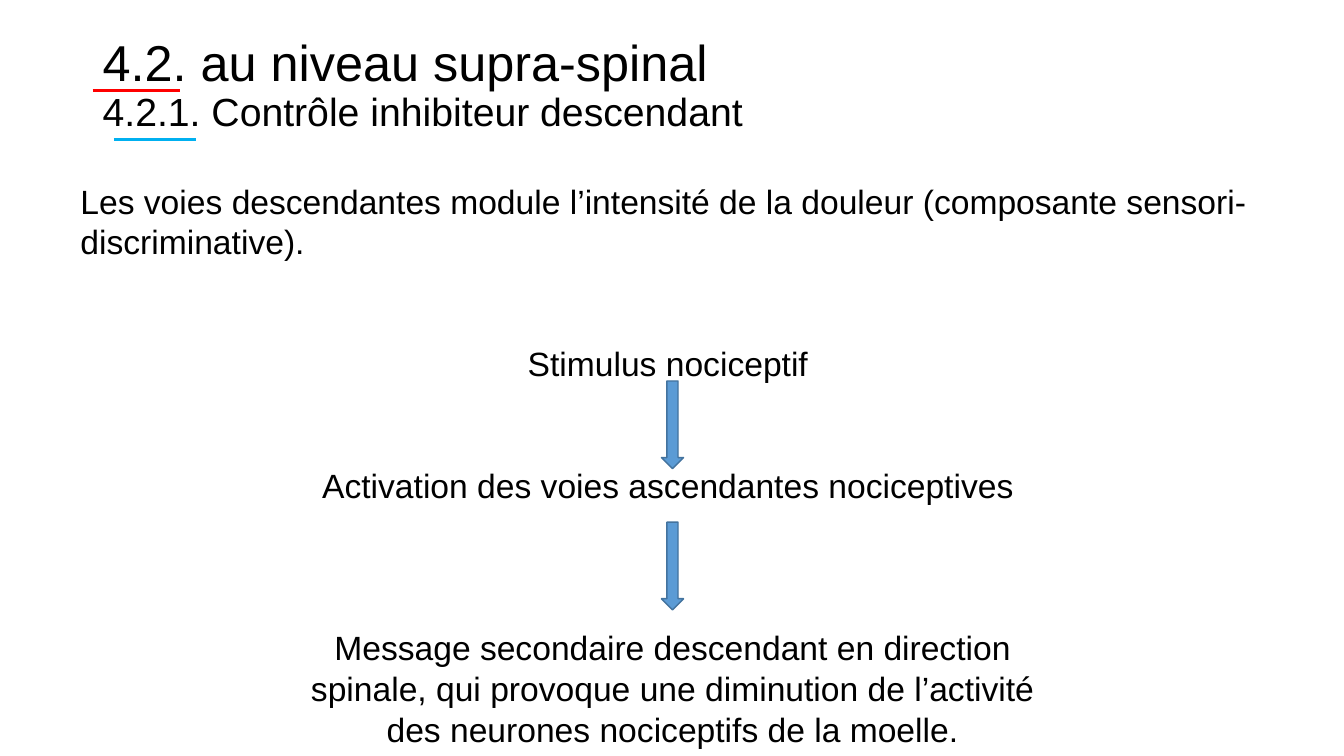
from pptx import Presentation
from pptx.dml.color import RGBColor
from pptx.enum.shapes import MSO_CONNECTOR, MSO_SHAPE
from pptx.enum.text import MSO_ANCHOR, PP_ALIGN
from pptx.oxml.ns import qn
from pptx.util import Emu, Pt
from lxml.etree import SubElement

PX = 9144  # 100 px to the inch
FONT = "Arial"
ROW = 29  # line height of the body, in points

# Text, alignment, empty rows above
STEPS = [
    ("Les voies descendantes module l’intensité de la douleur "
     "(composante sensori-discriminative).", PP_ALIGN.LEFT, 0),
    ("Stimulus nociceptif ", PP_ALIGN.CENTER, 2),
    ("Activation des voies ascendantes nociceptives ", PP_ALIGN.CENTER, 2),
    ("Message secondaire descendant en direction", PP_ALIGN.CENTER, 3),
    ("spinale, qui provoque une diminution de l’activité", PP_ALIGN.CENTER, 0),
    ("des neurones nociceptifs de la moelle.", PP_ALIGN.CENTER, 0),
]


def px(*vals):
    return [Emu(val * PX) for val in vals]


def color(code):
    return RGBColor.from_string(code)


def add_run(para, text, size):
    run = para.add_run()
    run.text = text
    run.font.name = FONT
    run.font.size = Pt(size)
    run.font.color.rgb = color("000000")


def add_frame(slide, box):
    frame = slide.shapes.add_textbox(*px(*box)).text_frame
    frame.word_wrap = True
    return frame


def add_rule(slide, left, top, width, code):
    line = slide.shapes.add_connector(
        MSO_CONNECTOR.STRAIGHT, *px(left, top, left + width, top))
    line.line.color.rgb = color(code)
    line.line.width = Pt(2.25)
    SubElement(line._element.spPr, qn("a:effectLst"))


def add_arrow(slide, left, top, width, height):
    arrow = slide.shapes.add_shape(
        MSO_SHAPE.DOWN_ARROW, *px(left, top, width, height))
    arrow.shadow.inherit = False
    arrow.fill.solid()
    arrow.fill.fore_color.rgb = color("5B9BD5")
    arrow.line.color.rgb = color("43739E")
    arrow.line.width = Pt(1)


def add_title(slide, left, top, width, height):
    frame = add_frame(slide, (left, top, width, height))
    frame.vertical_anchor = MSO_ANCHOR.MIDDLE
    para = frame.paragraphs[0]
    para.line_spacing = 0.9
    add_run(para, "4.2. au niveau supra-spinal ", 36)
    para.add_line_break()
    add_run(para, "4.2.1. Contrôle inhibiteur descendant", 28)
    # Rules under the two numbers
    add_rule(slide, left, top + 77, 87, "FF0000")
    add_rule(slide, left + 21, top + 125, 81, "00B0F0")


def add_body(slide, left, top, width, height):
    frame = add_frame(slide, (left, top, width, height))
    frame.margin_top = frame.margin_bottom = 0
    for num, (text, align, gap) in enumerate(STEPS):
        para = frame.add_paragraph() if num else frame.paragraphs[0]
        para.alignment = align
        para.line_spacing = Pt(ROW)
        if gap:
            para.space_before = Pt(gap * ROW)
        add_run(para, text, 24)
    # Arrows between the steps
    for num in range(2):
        add_arrow(slide, left + 586, top + 199 + num * 140, 22, 87)


def main():
    deck = Presentation()
    deck.slide_width, deck.slide_height = px(1333, 750)
    slide = deck.slides.add_slide(deck.slide_layouts[6])
    add_title(slide, 92, 13, 1150, 145)
    add_body(slide, 70, 179, 1194, 564)
    deck.save("out.pptx")


if __name__ == "__main__":
    main()
